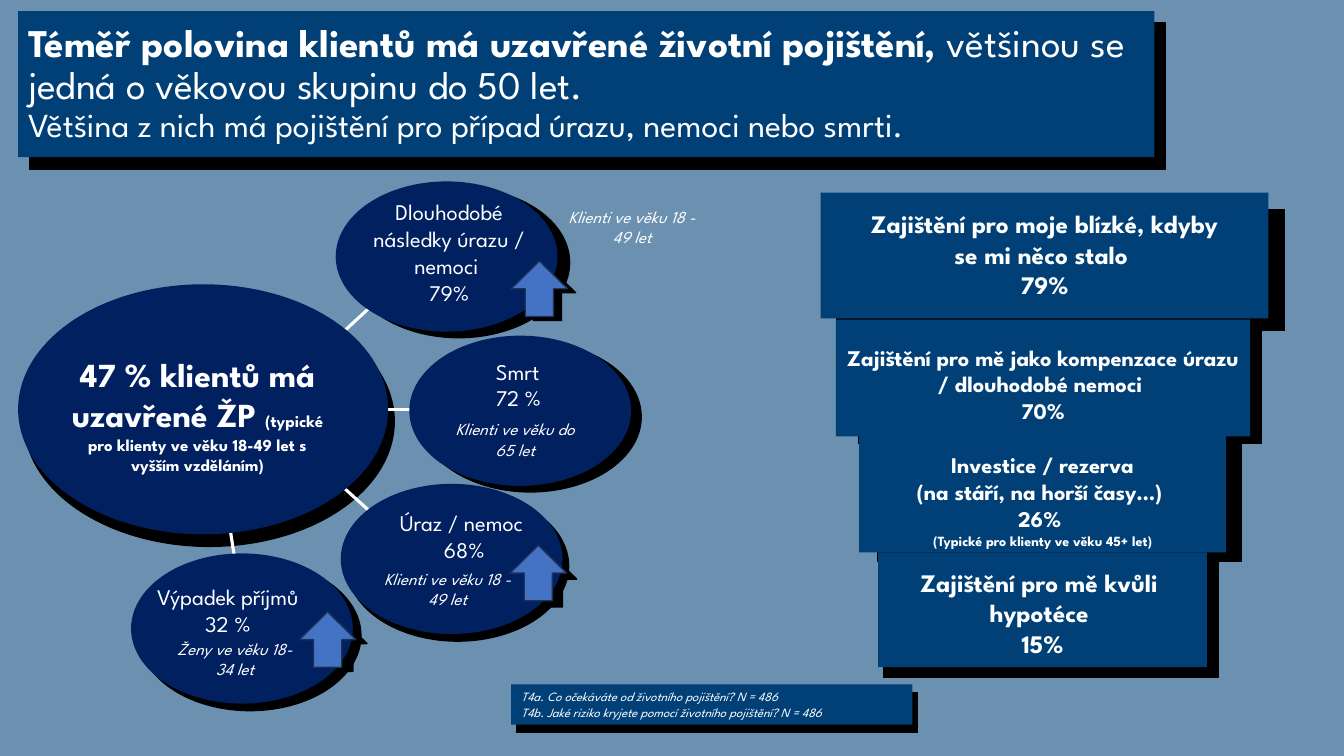
from lxml import etree
from pptx import Presentation
from pptx import util as u
from pptx.dml.color import RGBColor
from pptx.enum import shapes, text
from pptx.oxml.ns import qn

BACKDROP = RGBColor(0x6B, 0x90, 0xB0)
PANEL = RGBColor(0x00, 0x40, 0x77)
NAVY = RGBColor(0x00, 0x20, 0x60)
ARROW = RGBColor(0x44, 0x72, 0xC4)
ARROW_EDGE = RGBColor(0x1E, 0x32, 0x56)
BLACK = RGBColor(0, 0, 0)
WHITE = RGBColor(255, 255, 255)
FONT = "League Spartan"
SLIDE = (13.33, 7.5)

RECT = shapes.MSO_SHAPE.RECTANGLE
OVAL = shapes.MSO_SHAPE.OVAL
UP = shapes.MSO_SHAPE.UP_ARROW
CENTER, LEFT = text.PP_ALIGN.CENTER, text.PP_ALIGN.LEFT

TITLE_AREA = (0.18, 0.11, 11.27, 1.45)
TITLE = [[
    ("Téměř polovina klientů má uzavřené životní pojištění, ", 28, True),
    ("většinou se jedná o věkovou skupinu do 50 let. \n", 28, False),
    ("Většina z nich má pojištění pro případ úrazu, nemoci nebo smrti.", 24, False),
]]

HUB_AREA = (0.18, 2.82, 3.67, 2.48)
HUB_LABEL_AREA = (0.58, 3.46, 2.76, 1.31)
HUB_LABEL = [[
    ("47 % klientů má uzavřené ŽP ", 24, True),
    ("(typické pro klienty ve věku 18-49 let s vyšším vzděláním)", 12, True),
]]

RISK_SIZE = (2.2, 1.49)
RISKS = [
    {"at": (3.33, 1.8), "shadow": (0.12, 0.06), "line": (3.3, 3.39, 3.83, 2.9),
     "label": (["Dlouhodobé následky úrazu / nemoci ", "79%"], (3.51, 1.92, 1.89, 1.21), True, CENTER),
     "note": ("Klienti ve věku 18 - 49 let", (5.53, 2.0, 1.48, 0.5)),
     "arrow": ((5.07, 2.59), (0.08, 0.04))},
    {"at": (4.06, 3.33), "shadow": (0.1, 0.06), "line": (3.3, 4.06, 4.1, 4.06),
     "label": (["Smrt", "72 %"], (4.82, 3.5, 0.73, 0.64), False, LEFT),
     "note": ("Klienti ve věku do 65 let", (4.37, 4.11, 1.48, 0.5))},
    {"at": (3.38, 4.8), "shadow": (0.06, 0.07), "line": (3.3, 4.74, 3.83, 5.22),
     "label": (["Úraz / nemoc \n68%"], (3.74, 5.0, 1.73, 0.64), False, CENTER),
     "note": ("Klienti ve věku 18 - 49 let", (3.7, 5.59, 1.48, 0.5)),
     "arrow": ((5.06, 5.41), (0.1, 0.06))},
    {"at": (1.3, 5.49), "shadow": (0.08, 0.07), "line": (2.25, 5.04, 2.36, 5.75),
     "label": (["Výpadek příjmů", "32 %"], (1.46, 5.74, 1.92, 0.64), False, LEFT),
     "note": ("Ženy ve věku 18- 34 let", (1.6, 6.29, 1.46, 0.5)),
     "arrow": ((2.97, 6.07), (0.11, 0.04))},
]
ARROW_SIZE = (0.56, 0.55)

TIERS = [
    ((8.14, 1.91, 4.44, 1.25), (8.3, 2.08, 4.44, 1.2), 0.36, 0.16,
     [("Zajištění pro moje blízké, kdyby se mi něco stalo ", 18), ("79%", 18)]),
    ((8.29, 3.17, 4.11, 1.16), (8.52, 3.2, 3.99, 1.2), 0.1, 0.24,
     [("Zajištění pro mě jako kompenzace úrazu / dlouhodobé nemoci ", 16), ("70%", 16)]),
    ((8.52, 4.32, 3.64, 1.16), (8.71, 4.37, 3.6, 1.2), 0.1, 0.16,
     [("Investice / rezerva\n(na stáří, na horší časy…) ", 16), ("26% ", 16),
      ("(Typické pro klienty ve věku 45+ let)", 10)]),
    ((8.71, 5.48, 3.26, 1.14), (8.76, 5.52, 3.32, 1.2), 0.1, 0.15,
     [("Zajištění pro mě kvůli ", 18), ("hypotéce ", 18), ("15%", 18)]),
]

SOURCE_AREA = (5.07, 6.79, 3.98, 0.4)
SOURCES = ["T4a. Co očekáváte od životního pojištění? N = 486",
           "T4b. Jaké riziko kryjete pomocí životního pojištění? N = 486"]

deck = Presentation()
deck.slide_width, deck.slide_height = map(u.Inches, SLIDE)
page = deck.slides.add_slide(deck.slide_layouts[6])
page.background.fill.solid()
page.background.fill.fore_color.rgb = BACKDROP


def add_figure(kind, area, fill, edge=None):
    figure = page.shapes.add_shape(kind, *map(u.Inches, area))
    figure.shadow.inherit = False
    figure.fill.solid()
    figure.fill.fore_color.rgb = fill
    if edge is None:
        figure.line.fill.background()
    else:
        figure.line.color.rgb = edge
        figure.line.width = u.Pt(1)
    return figure


def add_shadow(kind, area, offset):
    left, top, width, height = area
    add_figure(kind, (left + offset[0], top + offset[1], width, height), BLACK, BLACK)


def add_text_box(area):
    return page.shapes.add_textbox(*map(u.Inches, area))


def write(box, paragraphs, align=CENTER, italic=False, wrap=True,
          anchor=text.MSO_ANCHOR.TOP, spacing=None, side=0.1, top=0.05):
    frame = box.text_frame
    frame.word_wrap = wrap
    frame.vertical_anchor = anchor
    frame.margin_left = frame.margin_right = u.Inches(side)
    frame.margin_top = u.Inches(top)
    for index, spans in enumerate(paragraphs):
        para = frame.paragraphs[0] if index == 0 else frame.add_paragraph()
        para.alignment = align[index] if isinstance(align, list) else align
        if spacing:
            para.line_spacing = spacing
        for words, size, bold in spans:
            for number, piece in enumerate(words.split("\n")):
                if number:
                    para.add_line_break()
                if piece:
                    span = para.add_run()
                    span.text = piece
                    span.font.name = FONT
                    span.font.size = u.Pt(size)
                    span.font.bold = bold
                    span.font.italic = italic
                    span.font.color.rgb = WHITE


def add_spoke(ends):
    spoke = page.shapes.add_connector(shapes.MSO_CONNECTOR.STRAIGHT, *map(u.Inches, ends))
    spoke.line.color.rgb = WHITE
    spoke.line.width = u.Pt(2.25)
    etree.SubElement(spoke._element.spPr, qn("a:effectLst"))


add_shadow(RECT, TITLE_AREA, (0.11, 0.12))
add_shadow(OVAL, HUB_AREA, (0.06, 0.12))
add_shadow(RECT, SOURCE_AREA, (0.05, 0.08))
for risk in RISKS:
    add_shadow(OVAL, risk["at"] + RISK_SIZE, risk["shadow"])
    if "arrow" in risk:
        place, offset = risk["arrow"]
        add_shadow(UP, place + ARROW_SIZE, offset)
for tier in TIERS:
    add_figure(RECT, tier[1], BLACK, BLACK)

title = add_figure(RECT, TITLE_AREA, PANEL)
write(title, TITLE, align=LEFT, anchor=text.MSO_ANCHOR.MIDDLE, spacing=0.9)

for risk in RISKS:
    add_spoke(risk["line"])
add_figure(OVAL, HUB_AREA, NAVY)
write(add_text_box(HUB_LABEL_AREA), HUB_LABEL)

for risk in RISKS:
    add_figure(OVAL, risk["at"] + RISK_SIZE, NAVY)
    lines, area, wrap, first_align = risk["label"]
    last_align = LEFT if lines[0] == "Smrt" else CENTER
    write(add_text_box(area), [[(line, 16, False)] for line in lines],
          align=[first_align, last_align], wrap=wrap)
    note, area = risk["note"]
    write(add_text_box(area), [[(note, 12, False)]], italic=True)
    if "arrow" in risk:
        add_figure(UP, risk["arrow"][0] + ARROW_SIZE, ARROW, ARROW_EDGE)

for area, _, side, top, lines in TIERS:
    write(add_figure(RECT, area, PANEL), [[(line, size, True)] for line, size in lines],
          side=side, top=top)

write(add_figure(RECT, SOURCE_AREA, PANEL), [[(line, 9, False)] for line in SOURCES],
      align=LEFT, italic=True)

deck.save("out.pptx")
